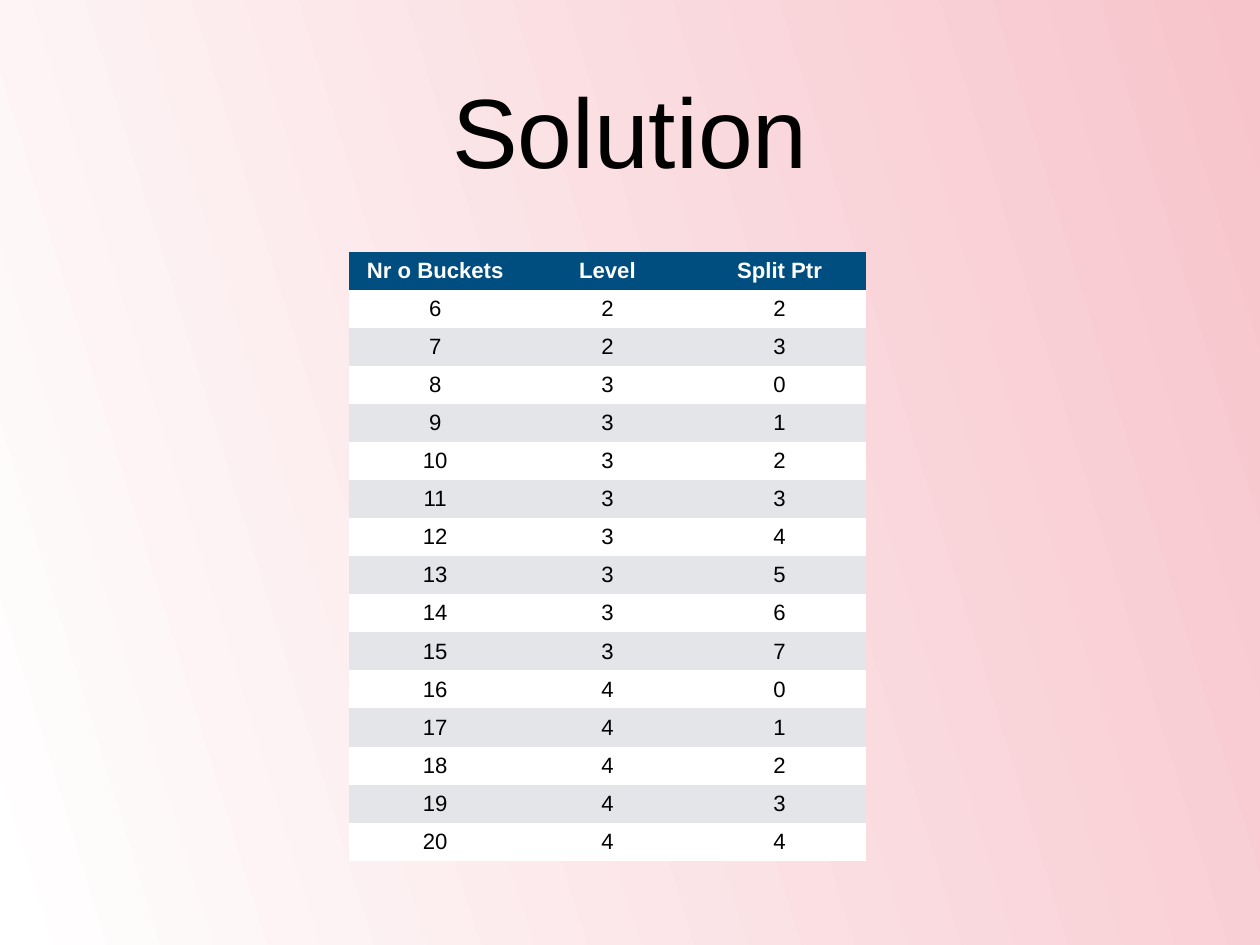
from pptx import Presentation
from pptx.dml.color import RGBColor
from pptx.enum.text import MSO_ANCHOR, MSO_AUTO_SIZE, PP_ALIGN
from pptx.oxml.ns import qn
from pptx.util import Inches, Pt

COLORS = {
    "pink": "F7C4CB",
    "white": "FFFFFF",
    "black": "000000",
    "header": "004D80",
    "band": "E3E5E8",
}
NO_STYLE_NO_GRID = "{2D5ABB26-0587-4C30-8999-92F81FD0307C}"
INSET = Inches(0.06)
MARGINS = {f"margin_{side}": INSET for side in ("left", "right", "top", "bottom")}


def color(name):
    return RGBColor.from_string(COLORS[name])


def write_centered(text_frame, text, size, color_name, bold=False):
    text_frame.text = text
    paragraph = text_frame.paragraphs[0]
    paragraph.alignment = PP_ALIGN.CENTER
    font = paragraph.runs[0].font
    font_format = {"name": "Arial", "size": Pt(size), "bold": bold}
    for attribute, value in font_format.items():
        setattr(font, attribute, value)
    font.color.rgb = color(color_name)


presentation = Presentation()
presentation.slide_width = Inches(14.22)
presentation.slide_height = Inches(10.67)
slide = presentation.slides.add_slide(presentation.slide_layouts.get_by_name("Title Only"))

# Background: pink at the top right to white at the bottom left
background = slide.background.fill
background.gradient()
background.gradient_angle = 197
for stop, color_name in zip(background.gradient_stops, ("pink", "white")):
    stop.color.rgb = color(color_name)

# Title
title = slide.shapes.title
title.left, title.top = Inches(1.04), Inches(0.28)
title.width, title.height = Inches(12.14), Inches(2.36)
title_format = {
    **MARGINS,
    "vertical_anchor": MSO_ANCHOR.MIDDLE,
    "auto_size": MSO_AUTO_SIZE.NONE,
    "word_wrap": True,
}
for attribute, value in title_format.items():
    setattr(title.text_frame, attribute, value)
write_centered(title.text_frame, "Solution", 80, "black")

# Linear hashing: the level is the rounded-down base-2 logarithm of the bucket
# count, and the split pointer is what is left over
table_rows = [("Nr o Buckets", "Level", "Split Ptr")]
for buckets in range(6, 21):
    level = buckets.bit_length() - 1
    table_rows.append((buckets, level, buckets - 2**level))

table_frame = slide.shapes.add_table(
    len(table_rows), 3, Inches(3.94), Inches(2.84), Inches(5.83), Inches(6.88)
)
table = table_frame.table
table_frame.element.find(".//" + qn("a:tableStyleId")).text = NO_STYLE_NO_GRID
table.horz_banding = False

for row_index, values in enumerate(table_rows):
    is_header = row_index == 0
    if is_header:
        fill_name = "header"
    else:
        fill_name = "white" if row_index % 2 else "band"
    for column_index, value in enumerate(values):
        cell = table.cell(row_index, column_index)
        cell.fill.solid()
        cell.fill.fore_color.rgb = color(fill_name)
        cell_format = {**MARGINS, "vertical_anchor": MSO_ANCHOR.MIDDLE}
        for attribute, setting in cell_format.items():
            setattr(cell, attribute, setting)
        write_centered(
            cell.text_frame, str(value), 18, "white" if is_header else "black", is_header
        )

presentation.save("out.pptx")
